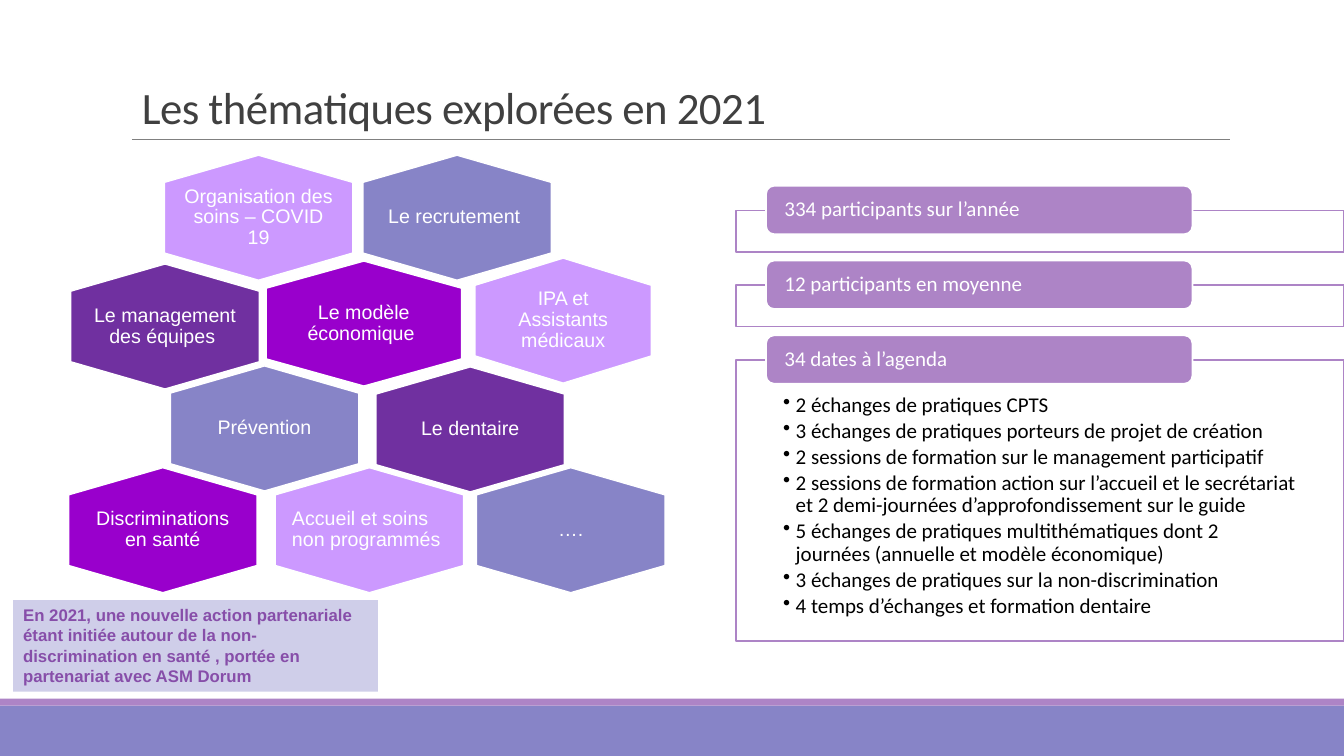
from lxml import etree
from pptx import Presentation
from pptx.dml.color import RGBColor
from pptx.enum import shapes as kinds, text as txt
from pptx.oxml import ns
from pptx.util import Pt

# Content
TITLE = "Les thématiques explorées en 2021"
THEMES = [  # text, left, top, width, colour, alignment
    ("Organisation des soins – COVID 19", 117.4, 110.9, 134.6, "lilac", "CENTER"),
    ("Le recrutement ", 259.2, 110.9, 134.6, "blue", "CENTER"),
    ("Le management des équipes ", 50.6, 188.6, 134.6, "plum", "CENTER"),
    ("Le modèle économique ", 190.1, 186.5, 139.7, "violet", "CENTER"),
    ("IPA et Assistants médicaux", 339.3, 184.4, 126, "lilac", "CENTER"),
    ("Prévention", 121.7, 261.4, 134.6, "blue", "CENTER"),
    ("Le dentaire", 268.6, 262.1, 134.6, "plum", "CENTER"),
    ("Discriminations en santé", 49, 334.1, 134.6, "violet", "CENTER"),
    ("Accueil et soins non programmés", 196.6, 334.1, 134.6, "lilac", "LEFT"),
    ("….", 340.4, 334.1, 134.6, "blue", "CENTER"),
]
DATES = [
    "2 échanges de pratiques CPTS",
    "3 échanges de pratiques porteurs de projet de création",
    "2 sessions de formation sur le management participatif",
    "2 sessions de formation action sur l’accueil et le secrétariat "
    "et 2 demi-journées d’approfondissement sur le guide",
    "5 échanges de pratiques multithématiques dont 2 journées (annuelle et modèle économique)",
    "3 échanges de pratiques sur la non-discrimination",
    "4 temps d’échanges et formation dentaire",
]
FIGURES = [  # heading, panel height, details
    ("334 participants sur l’année", 29.5, []),
    ("12 participants en moyenne", 29.5, []),
    ("34 dates à l’agenda", 200.9, DATES),
]
PARTNERSHIP = ("En 2021, une nouvelle action partenariale étant initiée autour de la "
               "non-discrimination en santé , portée en partenariat avec ASM Dorum")
COLOURS = {"blue": "8784C7", "mauve": "AD84C6", "lilac": "CC99FF", "violet": "9900CC",
           "plum": "7030A0", "pale": "CFCEE9", "note": "874EA9", "title": "404040",
           "rule": "808080", "white": "FFFFFF", "black": "000000"}

# Layout, in points
HEX_HEIGHT, HEX_SHOULDER = 89.3, 19.4
PANEL_LEFT, PANEL_TOP, PANEL_WIDTH, PANEL_PITCH = 525.6, 150.4, 434.6, 53.4
BAR_LEFT, BAR_RISE, BAR_WIDTH, BAR_HEIGHT = 547.2, 17.7, 304.6, 34.6

deck = Presentation()
deck.slide_width, deck.slide_height = Pt(960), Pt(540)
slide = deck.slides.add_slide(deck.slide_layouts[6])
board = slide.shapes


def colour(name):
    return RGBColor.from_string(COLOURS[name])


def paint(shape, fill, line=None, weight=1):
    shape.shadow.inherit = False
    shape.fill.solid()
    shape.fill.fore_color.rgb = colour(fill)
    if line:
        shape.line.color.rgb = colour(line)
        shape.line.width = Pt(weight)
    else:
        shape.line.fill.background()


def box(kind, left, top, width, height, fill, line=None, weight=1):
    shape = board.add_shape(kind, Pt(left), Pt(top), Pt(width), Pt(height))
    paint(shape, fill, line, weight)
    return shape


def write(shape, lines, size, ink, font="Calibri", bold=False, anchor="MIDDLE", align="LEFT",
          insets=(7.2, 3.6, 7.2, 3.6), spacing=1.0, after=0, bullet=False, tracking=None):
    frame = shape.text_frame
    margins = dict(zip(("margin_left", "margin_top", "margin_right", "margin_bottom"),
                       map(Pt, insets)))
    frame_format = {"word_wrap": True, "vertical_anchor": txt.MSO_ANCHOR[anchor], **margins}
    for key, value in frame_format.items():
        setattr(frame, key, value)
    for index, line in enumerate(lines):
        paragraph = frame.paragraphs[0] if index == 0 else frame.add_paragraph()
        run = paragraph.add_run()
        run.text = line
        for key, value in {"alignment": txt.PP_ALIGN[align], "line_spacing": spacing,
                           "space_after": Pt(after)}.items():
            setattr(paragraph, key, value)
        if bullet:
            properties = paragraph._p.get_or_add_pPr()
            properties.set("marL", str(Pt(9)))
            properties.set("indent", str(Pt(-9)))
            etree.SubElement(properties, ns.qn("a:buChar")).set("char", "•")
        for key, value in {"name": font, "size": Pt(size), "bold": bold}.items():
            setattr(run.font, key, value)
        run.font.color.rgb = colour(ink)
        if tracking:
            run._r.get_or_add_rPr().set("spc", str(tracking))


# Footer bands
RECT = kinds.MSO_SHAPE.RECTANGLE
box(RECT, 0, 504, 960, 36, "blue")
box(RECT, 0, 499, 960, 5, "mauve")

# Title and its rule
title = board.add_textbox(Pt(94.3), Pt(22.3), Pt(856), Pt(77))
write(title, [TITLE], 32, "title", anchor="BOTTOM", spacing=0.85, tracking=-40)
rule = board.add_connector(kinds.MSO_CONNECTOR.STRAIGHT, Pt(94.3), Pt(99.8), Pt(878.4), Pt(99.8))
rule.line.color.rgb = colour("rule")
rule.line.width = Pt(0.5)
etree.SubElement(rule._element.spPr, ns.qn("a:effectLst"))

# Honeycomb of themes
for theme, left, top, width, fill, align in THEMES:
    middle, right, bottom = left + width / 2, left + width, top + HEX_HEIGHT
    upper, lower = top + HEX_SHOULDER, bottom - HEX_SHOULDER
    corners = [(right, upper), (right, lower), (middle, bottom), (left, lower), (left, upper)]
    outline = board.build_freeform(Pt(middle), Pt(top))
    outline.add_line_segments([(Pt(x), Pt(y)) for x, y in corners], close=True)
    hexagon = outline.convert_to_shape()
    paint(hexagon, fill, "white")
    write(hexagon, [theme], 14, "white", font="Arial", align=align,
          insets=(12, 13.5, 12, 13.5), spacing=0.89, after=5)

# Partnership note
note = box(RECT, 9.4, 428.6, 260.6, 65.5, "pale")
write(note, [PARTNERSHIP], 12, "note", font="Arial", bold=True, anchor="TOP")

# Key figures
for row, (heading, height, details) in enumerate(FIGURES):
    top = PANEL_TOP + row * PANEL_PITCH
    panel = box(RECT, PANEL_LEFT, top, PANEL_WIDTH, height, "white", "mauve", 1.25)
    if details:
        write(panel, details, 15, "black", anchor="TOP", insets=(33.8, 24.6, 33.8, 8.5),
              spacing=0.9, after=2.25, bullet=True)
    bar = box(kinds.MSO_SHAPE.ROUNDED_RECTANGLE, BAR_LEFT, top - BAR_RISE,
              BAR_WIDTH, BAR_HEIGHT, "mauve", "white", 1.25)
    write(bar, [heading], 15, "white", insets=(11.5, 0, 11.5, 0), spacing=0.9)

deck.save("out.pptx")
